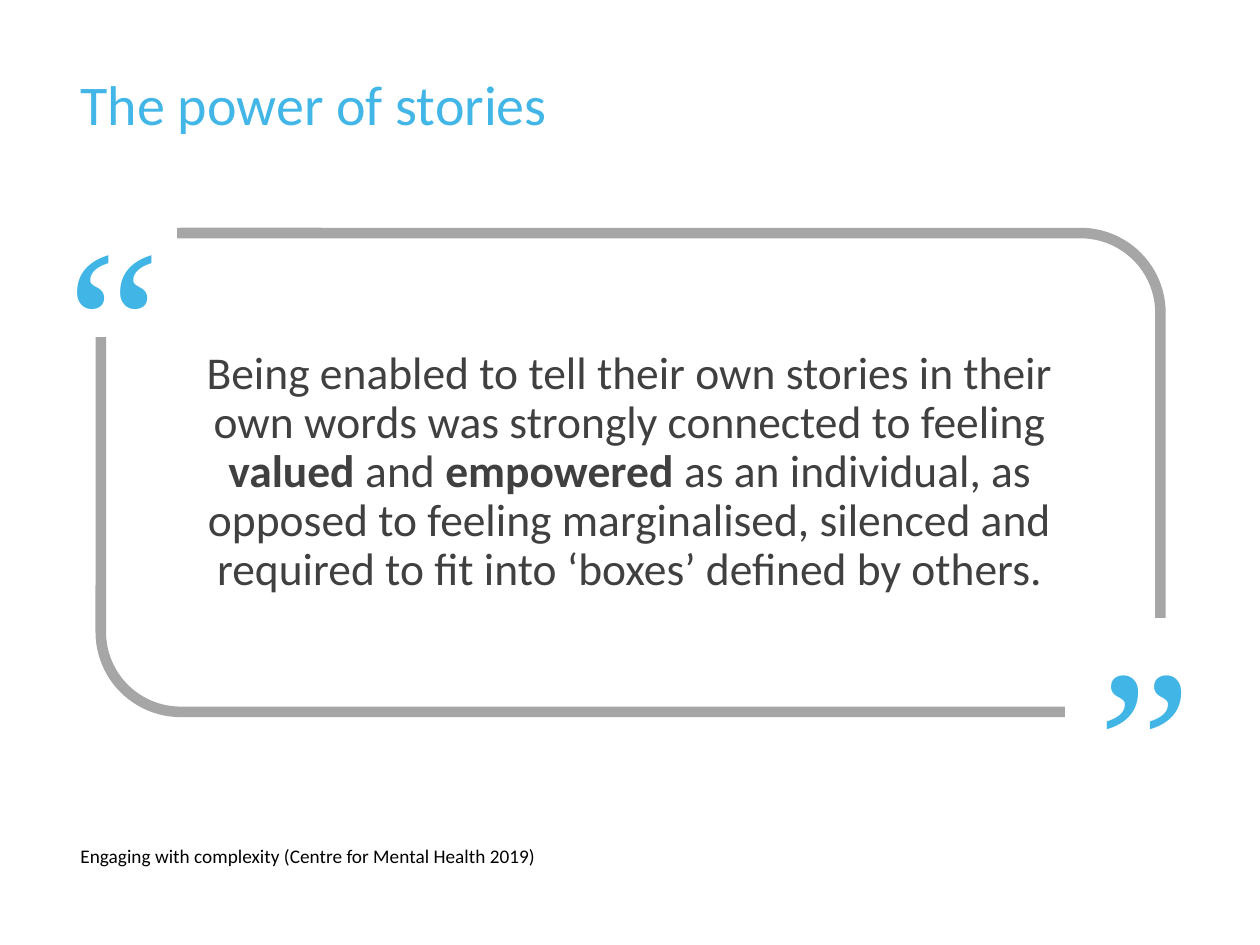
import pptx
import pptx.util
import pptx.dml.color
import pptx.enum.shapes
import pptx.enum.text
import pptx.oxml.ns
import lxml.etree

RGB = pptx.dml.color.RGBColor
TITLE = RGB(0x42, 0xB6, 0xE6)
MARK = RGB(0x41, 0xB6, 0xE6)
GREY = RGB(0xA6, 0xA6, 0xA6)
DARK = RGB(0x40, 0x40, 0x40)
BLACK = RGB(0, 0, 0)
WHITE = RGB(255, 255, 255)

PX = 9144  # 100 px to the inch
KIND = pptx.enum.shapes.MSO_SHAPE
ALIGN = pptx.enum.text.PP_ALIGN
ANCHOR = pptx.enum.text.MSO_ANCHOR
SIZE = pptx.enum.text.MSO_AUTO_SIZE

QUOTE = [
    ("Being enabled to tell their own stories in their own words "
     "was strongly connected to feeling ", False),
    ("valued", True),
    (" and ", False),
    ("empowered", True),
    (" as an individual, as opposed to feeling marginalised, silenced "
     "and required to fit into ‘boxes’ defined by others.", False),
]


def emu(*box):
    return [pptx.util.Emu(n * PX) for n in box]


def style(para, font, size, color):
    para.font.name = font
    para.font.size = pptx.util.Pt(size)
    para.font.color.rgb = color


def place(holder, box, anchor):
    holder.left, holder.top, holder.width, holder.height = emu(*box)
    frame = holder.text_frame
    frame.word_wrap = True
    frame.auto_size = SIZE.NONE
    frame.vertical_anchor = anchor
    para = frame.paragraphs[0]
    para.line_spacing = 0.9
    para.space_before = pptx.util.Pt(0)
    return para


def add_label(slide, box, text, font, size, color, wrap):
    frame = slide.shapes.add_textbox(*emu(*box)).text_frame
    frame.word_wrap = wrap
    frame.auto_size = SIZE.SHAPE_TO_FIT_TEXT
    para = frame.paragraphs[0]
    para.text = text
    style(para, font, size, color)


def add_panel(slide, kind, box, color, width, fill=None):
    shape = slide.shapes.add_shape(kind, *emu(*box))
    shape.shadow.inherit = False
    if fill is None:
        shape.fill.background()
    else:
        shape.fill.solid()
        shape.fill.fore_color.rgb = fill
    shape.line.color.rgb = color
    shape.line.width = pptx.util.Pt(width)


def add_title(slide, box):
    para = place(slide.shapes.title, box, ANCHOR.TOP)
    para.text = "The power of stories"
    para.alignment = ALIGN.LEFT
    style(para, "Calibri", 32, TITLE)


def add_quote(slide, box):
    x, y, w, h = box
    # Frame, with two opposite corners masked
    add_panel(slide, KIND.ROUNDED_RECTANGLE, box, GREY, 6)
    for left, top in ((x + w - 75, y + h - 74), (x - 40, y - 18)):
        add_panel(slide, KIND.RECTANGLE, (left, top, 100, 100), WHITE, 1, WHITE)

    # Quoted text
    para = place(slide.placeholders[1], (x + 66, y + 50, 708, h - 100),
                 ANCHOR.MIDDLE)
    para.alignment = ALIGN.CENTER
    props = para._p.get_or_add_pPr()
    props.set("marL", "0")
    props.set("indent", "0")
    lxml.etree.SubElement(props, pptx.oxml.ns.qn("a:buNone"))
    style(para, "Calibri", 26, DARK)
    for text, bold in QUOTE:
        run = para.add_run()
        run.text = text
        run.font.bold = bold

    # Quotation marks
    for mark, left, top, wide in (("”", x + w - 59, y + h - 89, 95),
                                  ("“", x - 36, y - 43, 137)):
        add_label(slide, (left, top, wide, 212), mark,
                  "Times New Roman", 120, MARK, False)


def add_source(slide, box):
    add_label(slide, box,
              "Engaging with complexity (Centre for Mental Health 2019)",
              "Calibri", 11, BLACK, True)


def main():
    deck = pptx.Presentation()
    deck.slide_width, deck.slide_height = emu(1000, 750)
    slide = deck.slides.add_slide(deck.slide_layouts[1])
    add_title(slide, (54, 56, 906, 103))
    add_quote(slide, (80, 185, 841, 380))
    add_source(slide, (54, 665, 745, 29))
    deck.save("out.pptx")


if __name__ == "__main__":
    main()
